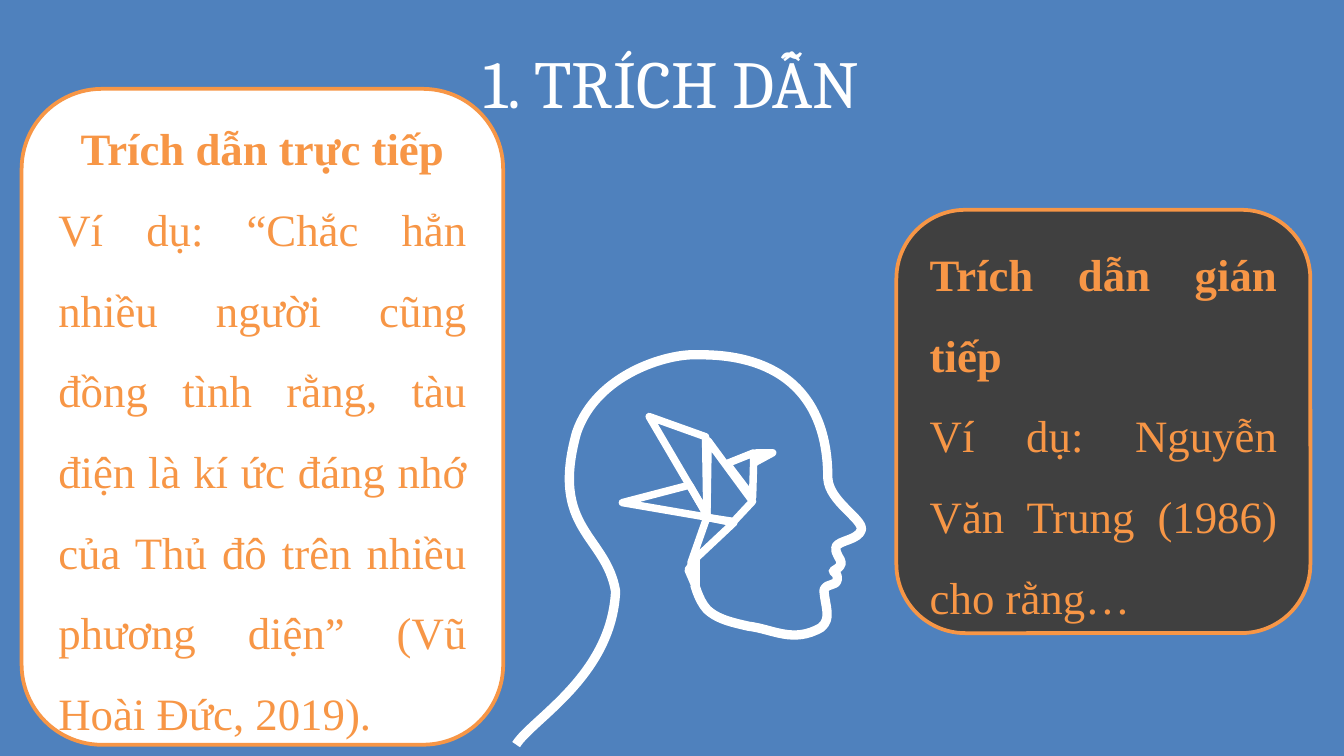
from pptx import Presentation
from pptx.dml.color import RGBColor
from pptx.enum.shapes import MSO_SHAPE
from pptx.enum.text import MSO_ANCHOR, PP_ALIGN
from pptx.oxml.ns import qn
from pptx.util import Pt
from lxml.etree import SubElement

COLORS = {"back": "4F81BD", "white": "FFFFFF", "accent": "F79646", "dark": "404040"}

# Closed outlines of the paper bird, in points
BIRD = [
    [(373, 299.5), (373, 315.4), (368.6, 305.3)],
    [(370.1, 301.7), (378.7, 277.2), (393.1, 280.1)],
    [(405.4, 242.6), (414, 242.6), (404.6, 247.7)],
    [(389.5, 248.4), (403.9, 242.6), (403.2, 266.4)],
    [(333.4, 269.3), (369.4, 259.9), (379.4, 277.2)],
    [(393.1, 279.4), (403.2, 268.6), (379.4, 236.2), (378.7, 277.2)],
    [(378, 234), (347.8, 223.2), (378.7, 275.8)],
]
# Start point, then two control points and an end point per curve
HEAD = [
    (372.2, 313.2),
    (372.2, 313.2), (375.1, 324.7), (380.9, 328.3),
    (385.9, 331.9), (391.7, 333.4), (401, 335.5),
    (414, 337), (424.8, 344.9), (439.9, 336.2),
    (445.7, 331.2), (442.1, 325.4), (441.4, 316.1),
    (443.5, 311.8), (447.8, 314.6), (448.6, 310.3),
    (448.6, 307.4), (447.8, 307.4), (446.4, 306),
    (447.8, 304.6), (450, 304.6), (450.7, 301.7),
    (450.7, 299.5), (447.1, 296.6), (447.8, 293),
    (449.3, 289.4), (460.1, 289.4), (461.5, 283.7),
    (462.2, 277.9), (444.2, 268.6), (443.5, 256.3),
    (443.5, 188.6), (385.2, 190.1), (373, 190.1),
    (357.8, 189.4), (319.7, 200.2), (308.9, 231.8),
    (294.5, 283.7), (324.7, 286.6), (329.8, 316.8),
    (327.6, 362.2), (285.1, 385.2), (276.5, 398.9),
]


def tint(name):
    return RGBColor.from_string(COLORS[name])


def write(para, text, font="Times New Roman", size=24, color="accent",
          bold=False, align=PP_ALIGN.LEFT, space=1.5):
    para.alignment = align
    para.line_spacing = space
    run = para.add_run()
    run.text = text
    run.font.name = font
    run.font.size = Pt(size)
    run.font.bold = bold
    run.font.color.rgb = tint(color)


def bend(shape):
    """Turn each three line segments of a freeform into one cubic curve."""
    track = next(shape._element.iter(qn("a:path")))
    lines = track.findall(qn("a:lnTo"))
    for i in range(0, len(lines), 3):
        curve = SubElement(track, qn("a:cubicBezTo"))
        for line in lines[i:i + 3]:
            curve.append(line[0])
            track.remove(line)


class Deck:
    def __init__(self, wide, high):
        self.show = Presentation()
        self.show.slide_width, self.show.slide_height = Pt(wide), Pt(high)
        self.slide = self.show.slides.add_slide(self.show.slide_layouts[6])
        fill = self.slide.background.fill
        fill.solid()
        fill.fore_color.rgb = tint("back")

    def title(self, text, *box):
        frame = self.slide.shapes.add_textbox(*map(Pt, box)).text_frame
        frame.word_wrap = True
        frame.vertical_anchor = MSO_ANCHOR.MIDDLE
        write(frame.paragraphs[0], text, font="Cambria", size=36,
              color="white", space=0.8)

    def card(self, head, body, fill, align, *box):
        shape = self.slide.shapes.add_shape(MSO_SHAPE.ROUNDED_RECTANGLE, *map(Pt, box))
        shape.shadow.inherit = False
        shape.fill.solid()
        shape.fill.fore_color.rgb = tint(fill)
        shape.line.color.rgb = tint("accent")
        shape.line.width = Pt(2)
        frame = shape.text_frame
        frame.word_wrap = True
        frame.vertical_anchor = MSO_ANCHOR.MIDDLE
        write(frame.paragraphs[0], head, bold=True, align=align)
        write(frame.add_paragraph(), body, align=PP_ALIGN.JUSTIFY)

    def trace(self, group, points, width, close=True):
        spots = [(Pt(x), Pt(y)) for x, y in points]
        pen = group.shapes.build_freeform(*spots[0])
        pen.add_line_segments(spots[1:], close=close)
        shape = pen.convert_to_shape()
        shape.shadow.inherit = False
        shape.fill.background()
        shape.line.color.rgb = tint("white")
        shape.line.width = Pt(width)
        return shape

    def mind(self):
        group = self.slide.shapes.add_group_shape()
        for part in BIRD:
            self.trace(group, part, 4)
        bend(self.trace(group, HEAD, 5, close=False))


def main():
    deck = Deck(720, 405)
    deck.mind()
    deck.title("1. TRÍCH DẪN", 252, 10.8, 267.8, 74.2)
    deck.card("Trích dẫn trực tiếp",
              "Ví dụ: “Chắc hẳn nhiều người cũng đồng tình rằng, tàu điện là kí ức "
              "đáng nhớ của Thủ đô trên nhiều phương diện” (Vũ Hoài Đức, 2019).",
              "white", PP_ALIGN.CENTER, 11.6, 47.6, 258, 351.4)
    deck.card("Trích dẫn gián tiếp",
              "Ví dụ: Nguyễn Văn Trung (1986) cho rằng…",
              "dark", PP_ALIGN.JUSTIFY, 480.2, 112.4, 221.8, 226.8)
    deck.show.save("out.pptx")


if __name__ == "__main__":
    main()
